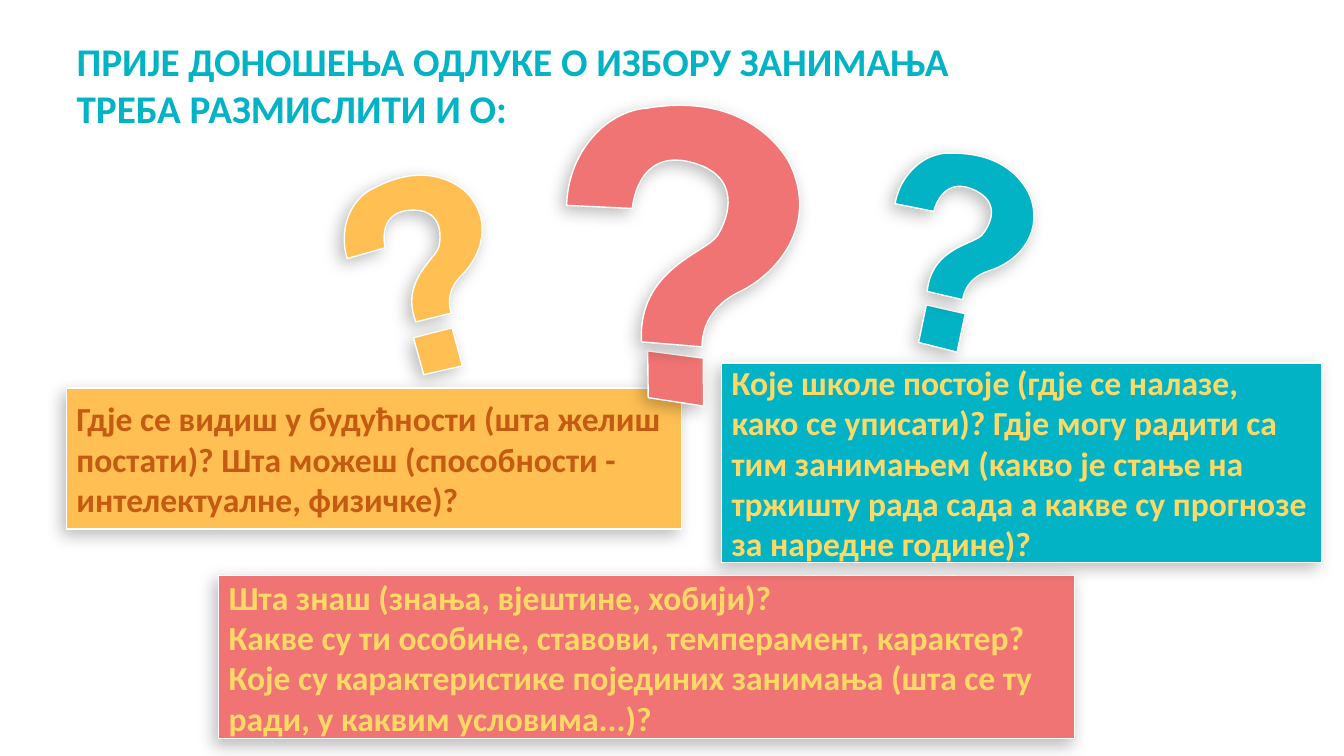
from lxml.etree import SubElement
from pptx import Presentation
from pptx.dml.color import RGBColor
from pptx.enum.shapes import MSO_SHAPE
from pptx.enum.text import MSO_ANCHOR, MSO_AUTO_SIZE, PP_ALIGN
from pptx.oxml.ns import qn
from pptx.util import Pt

YELLOW = RGBColor(0xFF, 0xBF, 0x53)
CORAL = RGBColor(0xF0, 0x74, 0x74)
TEAL = RGBColor(0x02, 0xB3, 0xC5)
BROWN = RGBColor(0xC5, 0x5A, 0x11)
CREAM = RGBColor(0xFF, 0xD9, 0x66)
WHITE = RGBColor(0xFF, 0xFF, 0xFF)

# Content
TITLE = ["ПРИЈЕ ДОНОШЕЊА ОДЛУКЕ О ИЗБОРУ ЗАНИМАЊА", "ТРЕБА РАЗМИСЛИТИ И О:"]

# Places are left, top, width, height; angle turns the question mark
TOPICS = [
    dict(fill=YELLOW, color=BROWN, box=(47.5, 277.2, 439.2, 100.8), angle=5.5,
         dot=(294.5, 233.3, 36.7, 35.3), hook=(243.4, 110.9, 108, 118.8),
         lines=["Гдје се видиш у будућности (шта желиш постати)? Шта можеш "
                "(способности - интелектуалне, физичке)?"]),
    dict(fill=CORAL, color=CREAM, box=(156.2, 411.1, 611.3, 116.6), angle=24.1,
         dot=(456.5, 249.1, 52.6, 41.8), hook=(400.3, 51.1, 180, 198),
         lines=["Шта знаш (знања, вјештине, хобији)?",
                "Какве су ти особине, ставови, темперамент, карактер? "
                "Које су карактеристике појединих занимања (шта се ту ради, "
                "у каквим условима...)?"]),
    dict(fill=TEAL, color=CREAM, box=(515.5, 259.2, 428.4, 142.6), angle=32.7,
         dot=(654.5, 216.7, 36.7, 35.3), hook=(635.8, 95.8, 108, 118.8),
         lines=["Које школе постоје (гдје се налазе, како се уписати)? Гдје могу "
                "радити са тим занимањем (какво је стање на тржишту рада сада "
                "а какве су прогнозе за наредне године)?"]),
]

# Upright outlines: a start, then lines (one point) and curves
# (two control points and an end point)
DOT = [[(-18.4, -7.3)], [(-8.7, 18.6)], [(17.9, 9.5)], [(8.1, -17.1)], [(-18.4, -7.3)]]
HOOK = [
    [(-79.5, 32)],
    [(-35.9, 14.9), (-35.9, 14.9), (-35.9, 14.9)],
    [(-35.9, 14.9), (-50.6, -25), (-12, -32.1)],
    [(26.7, -39.1), (29.4, -6.5), (27.2, 7.9)],
    [(25, 22.3), (-15, 52.8), (8.8, 99)],
    [(49.7, 84.6), (49.7, 84.6), (49.7, 84.6)],
    [(49.7, 84.6), (37.4, 62.5), (57.5, 38.5)],
    [(78.2, 14.3), (89.4, -29.4), (53.6, -59.9)],
    [(53.6, -59.9), (9.5, -98.5), (-56.5, -54)],
    [(-56.5, -54), (-67.7, -49), (-77, -33)],
    [(-85.8, -17.2), (-90, 6.8), (-79.5, 32)],
]


def style_shape(shape, fill):
    shape.fill.solid()
    shape.fill.fore_color.rgb = fill
    shape.line.color.rgb = WHITE
    shape.line.width = Pt(1)
    shape.shadow.inherit = False
    effects = shape._element.spPr.find(qn("a:effectLst"))
    shadow = SubElement(effects, qn("a:outerShdw"), blurRad=str(Pt(12)),
                        dist=str(Pt(5)), dir="8100000", algn="tr", rotWithShape="0")
    tint = SubElement(shadow, qn("a:srgbClr"), val="000000")
    SubElement(tint, qn("a:alpha"), val="26000")


def place_at(shape, left, top, width, height):
    shape.left, shape.top = Pt(left), Pt(top)
    shape.width, shape.height = Pt(width), Pt(height)


def add_mark_part(page, outline, place, angle, fill):
    points = [(Pt(x), Pt(y)) for segment in outline for x, y in segment]
    builder = page.shapes.build_freeform(*points[0], scale=1.0)
    builder.add_line_segments(points[1:], close=True)
    shape = builder.convert_to_shape()
    # Join each three points of a curve into one Bezier segment
    steps = iter(list(shape._element.iter(qn("a:lnTo"))))
    for segment in outline[1:]:
        first = next(steps)
        if len(segment) == 3:
            curve = first.makeelement(qn("a:cubicBezTo"), {})
            first.addprevious(curve)
            for step in (first, next(steps), next(steps)):
                curve.append(step[0])
                step.getparent().remove(step)
    place_at(shape, *place)
    shape.rotation = angle
    style_shape(shape, fill)


def write(frame, lines, *, size, color, anchor):
    frame.word_wrap = True
    frame.vertical_anchor = anchor
    for index, line in enumerate(lines):
        para = frame.paragraphs[0] if index == 0 else frame.add_paragraph()
        para.alignment = PP_ALIGN.LEFT
        span = para.add_run()
        span.text = line
        span.font.name = "Calibri"
        span.font.size = Pt(size)
        span.font.bold = True
        span.font.color.rgb = color


deck = Presentation()
deck.slide_width, deck.slide_height = Pt(960), Pt(540)
page = deck.slides.add_slide(deck.slide_layouts[5])

# Title
title = page.shapes.title
place_at(title, 47.5, 23, 835.2, 74.9)
write(title.text_frame, TITLE, size=28, color=TEAL, anchor=MSO_ANCHOR.TOP)
title.text_frame.auto_size = MSO_AUTO_SIZE.SHAPE_TO_FIT_TEXT

# Question marks with their boxes
for topic in TOPICS:
    for outline, part in ((DOT, "dot"), (HOOK, "hook")):
        add_mark_part(page, outline, topic[part], topic["angle"], topic["fill"])
    box = page.shapes.add_shape(MSO_SHAPE.RECTANGLE, *map(Pt, topic["box"]))
    style_shape(box, topic["fill"])
    write(box.text_frame, topic["lines"], size=24, color=topic["color"],
          anchor=MSO_ANCHOR.MIDDLE)

deck.save("out.pptx")
